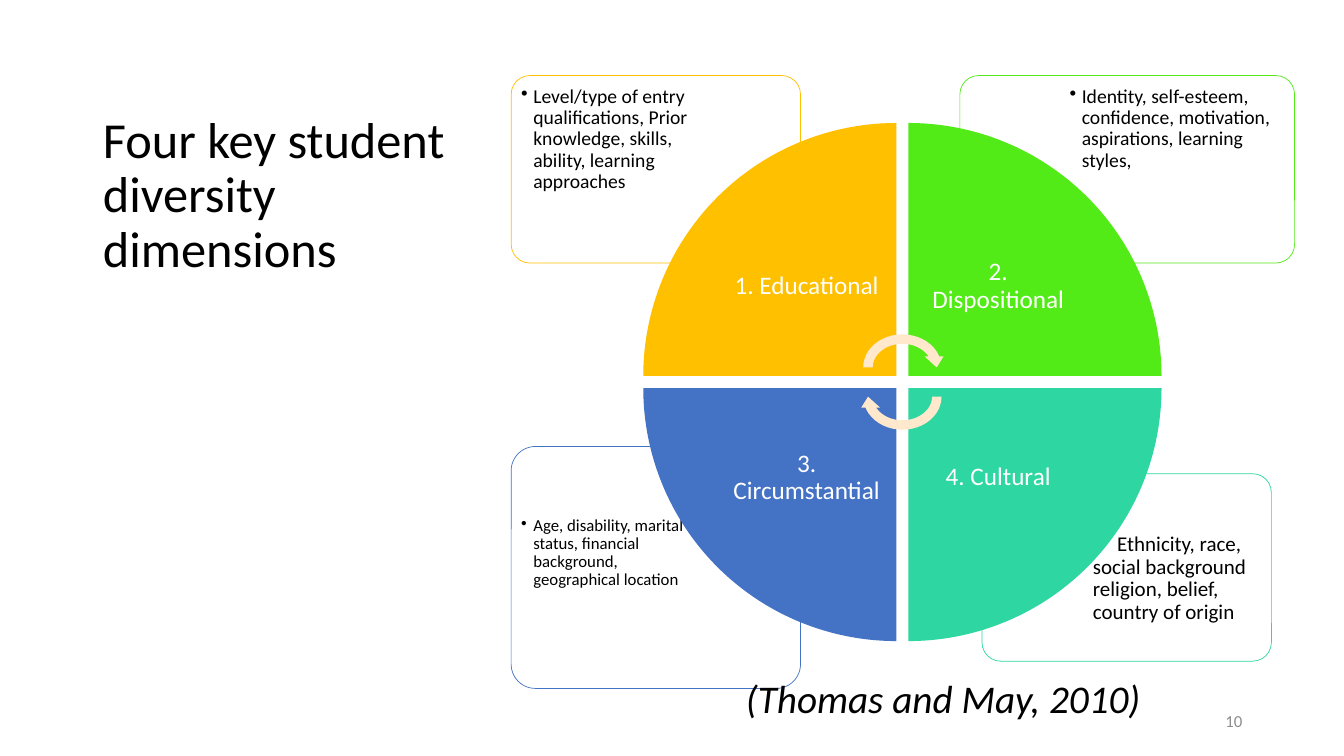
from dataclasses import dataclass

from lxml import etree
from pptx import Presentation
from pptx.dml.color import RGBColor
from pptx.enum.shapes import MSO_SHAPE
from pptx.enum.text import MSO_ANCHOR, MSO_AUTO_SIZE, PP_ALIGN
from pptx.oxml.ns import qn
from pptx.util import Inches, Pt

WEDGE, ARROW, ROUNDED = MSO_SHAPE.PIE_WEDGE, MSO_SHAPE.CIRCULAR_ARROW, MSO_SHAPE.ROUNDED_RECTANGLE
TOP, MIDDLE, BOTTOM = MSO_ANCHOR.TOP, MSO_ANCHOR.MIDDLE, MSO_ANCHOR.BOTTOM
LEFT, CENTER, RIGHT = PP_ALIGN.LEFT, PP_ALIGN.CENTER, PP_ALIGN.RIGHT
NO_AUTOFIT = MSO_AUTO_SIZE.NONE


@dataclass(frozen=True)
class Theme:
    font: str = "Calibri"
    text: str = "000000"
    white: str = "FFFFFF"
    muted: str = "8C8C8C"
    arrow: str = "FFE8CC"
    educational: str = "FFC000"
    dispositional: str = "53EB17"
    circumstantial: str = "4472C4"
    cultural: str = "2ED7A1"
    title_size: int = 36
    source_size: int = 28
    label_size: int = 18
    number_size: int = 12


THEME = Theme()

# label, colour, column, row, wedge rotation
QUADRANTS = [
    ("1. Educational", THEME.educational, 0, 0, 0),
    ("2. Dispositional", THEME.dispositional, 1, 0, 90),
    ("4. Cultural", THEME.cultural, 1, 1, 180),
    ("3. Circumstantial", THEME.circumstantial, 0, 1, 270),
]

# colour, frame box, text offset in the frame, text width, inset, size, bulleted, text
CALLOUTS = [
    (THEME.cultural, (9.74, 4.7, 2.87, 1.86), (0.9, 0.51), 1.93, 0.08, 15, False,
     "Ethnicity, race, social background religion, belief, country of origin"),
    (THEME.circumstantial, (5.07, 4.43, 2.87, 2.4), (0.05, 0.65), 1.9, 0.05, 12, True,
     "Age, disability, marital status, financial background, geographical location"),
    (THEME.dispositional, (9.52, 0.75, 3.32, 1.86), (1.03, 0.05), 2.24, 0.06, 14, True,
     "Identity, self-esteem, confidence, motivation, aspirations, learning styles,"),
    (THEME.educational, (5.07, 0.75, 2.87, 1.86), (0.04, 0.05), 1.93, 0.06, 14, True,
     "Level/type of entry qualifications, Prior knowledge, skills, ability, learning approaches"),
]


def inches(box):
    return [Inches(length) for length in box]


def write(frame, text, size, color, anchor=TOP, align=LEFT, spacing=0.9, inset=None):
    """Fill a text frame with one formatted paragraph and return the paragraph."""
    frame.word_wrap = True
    frame.auto_size = NO_AUTOFIT
    frame.vertical_anchor = anchor
    if inset is not None:
        frame.margin_left = frame.margin_right = Inches(inset)
        frame.margin_top = frame.margin_bottom = Inches(inset)
    frame.text = text
    paragraph = frame.paragraphs[0]
    paragraph.alignment = align
    paragraph.line_spacing = spacing
    for run in paragraph.runs:
        run.font.name = THEME.font
        run.font.size = Pt(size)
        run.font.color.rgb = RGBColor.from_string(color)
    return paragraph


def add_text(slide, box, *args, **options):
    return write(slide.shapes.add_textbox(*inches(box)).text_frame, *args, **options)


def add_filled(slide, kind, box, color, rotation=0):
    """Add a flat preset shape without an outline."""
    shape = slide.shapes.add_shape(kind, *inches(box))
    shape.shadow.inherit = False
    shape.fill.solid()
    shape.fill.fore_color.rgb = RGBColor.from_string(color)
    shape.line.fill.background()
    shape.rotation = rotation
    return shape


def add_title(slide, box):
    title = slide.shapes.title
    title.left, title.top, title.width, title.height = inches(box)
    write(title.text_frame, "Four key student \vdiversity dimensions",
          THEME.title_size, THEME.text, anchor=BOTTOM)
    title.text_frame.margin_bottom = Inches(0.59)


def indent(paragraph, bulleted):
    """Hang the text after a bullet, or indent the first line where there is none."""
    properties = paragraph._p.get_or_add_pPr()
    properties.set("marL", str(Inches(0.12)))
    properties.set("indent", str(Inches(-0.12 if bulleted else 0.24)))
    if bulleted:
        etree.SubElement(properties, qn("a:buChar"), char="•")


def add_callout(slide, box, color, offset, width, inset, size, bulleted, text):
    frame = add_filled(slide, ROUNDED, box, THEME.white)
    frame.adjustments[0] = 0.1
    frame.line.color.rgb = RGBColor.from_string(color)
    frame.line.width = Pt(0.5)
    left, top, _, height = box
    text_box = (left + offset[0], top + offset[1], width, height - offset[1] - 0.04)
    indent(add_text(slide, text_box, text, size, THEME.text, inset=inset), bulleted)


def add_wheel(slide, left, top, size, gap=0.12):
    """Draw four wedges with labels beside the hub, and the two arrows around it."""
    wedge = (size - gap) / 2
    label_side = 1.78
    hub_inset = wedge - label_side
    for label, color, column, row, rotation in QUADRANTS:
        x = left + column * (wedge + gap)
        y = top + row * (wedge + gap)
        add_filled(slide, WEDGE, (x, y, wedge, wedge), color, rotation)
        label_box = (x + (1 - column) * hub_inset, y + (1 - row) * hub_inset,
                     label_side, label_side)
        add_text(slide, label_box, label, THEME.label_size, THEME.white,
                 anchor=MIDDLE, align=CENTER, inset=0.14)

    arrow_width, arrow_height, arrow_shift = 0.87, 0.75, 0.145
    for direction, rotation in ((-1, 0), (1, 180)):
        arrow_box = (left + (size - arrow_width) / 2,
                     top + (size - arrow_height) / 2 + direction * arrow_shift,
                     arrow_width, arrow_height)
        add_filled(slide, ARROW, arrow_box, THEME.arrow, rotation)


def main():
    presentation = Presentation()
    presentation.slide_width, presentation.slide_height = Inches(13.33), Inches(7.5)
    slide = presentation.slides.add_slide(presentation.slide_layouts[5])

    add_title(slide, (0.92, 0.5, 4.3, 2.85))
    for color, box, *content in CALLOUTS:
        add_callout(slide, box, color, *content)
    add_wheel(slide, 6.38, 1.22, 5.14)
    add_text(slide, (9.42, 6.95, 3, 0.4), "10", THEME.number_size, THEME.muted,
             anchor=MIDDLE, align=RIGHT, spacing=1.0)
    source = add_text(slide, (7.3, 6.64, 4.15, 0.57), "(Thomas and May, 2010)",
                      THEME.source_size, THEME.text, spacing=1.0)
    source.runs[0].font.italic = True

    presentation.save("out.pptx")


if __name__ == "__main__":
    main()
